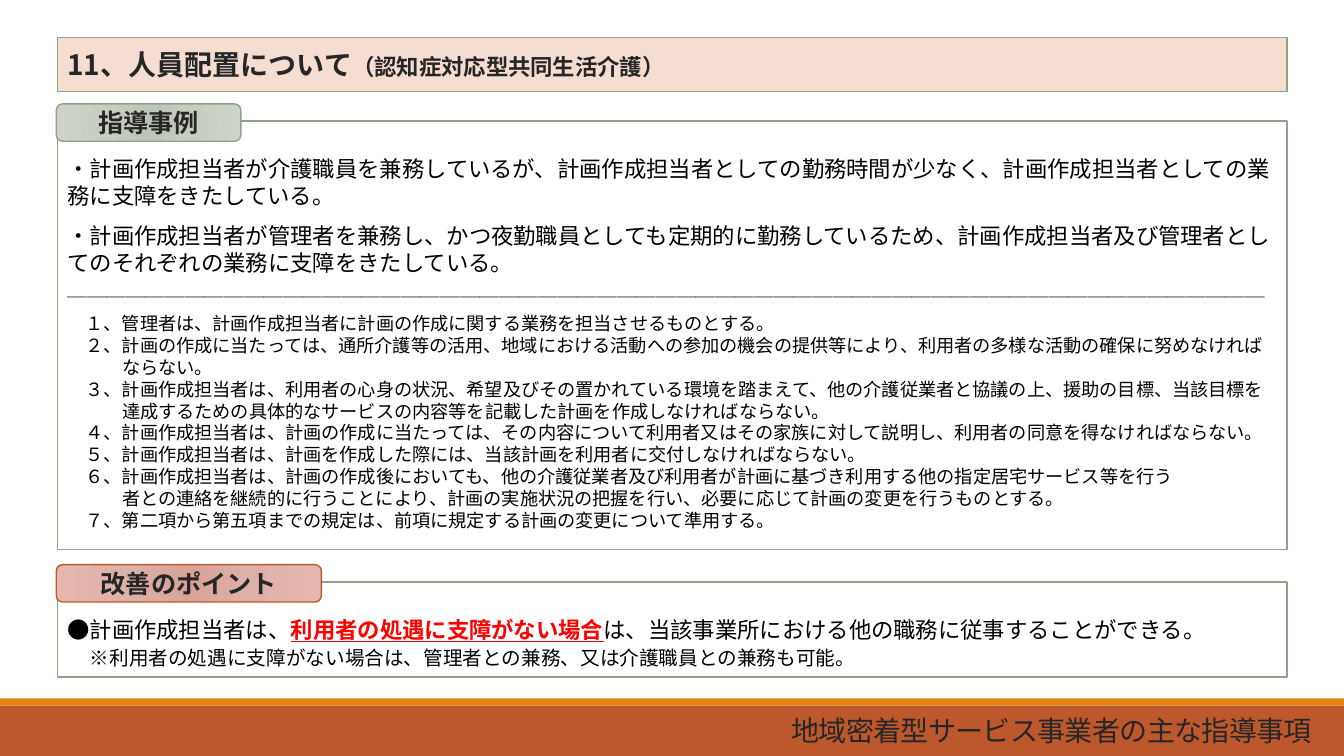
import pptx
import pptx.dml.color
import pptx.enum.shapes
import pptx.enum.text
import pptx.oxml
import pptx.oxml.ns
import pptx.util
from dataclasses import dataclass
from lxml import etree

Cm = pptx.util.Cm
Pt = pptx.util.Pt
Shape = pptx.enum.shapes.MSO_SHAPE
Align = pptx.enum.text.PP_ALIGN
Anchor = pptx.enum.text.MSO_ANCHOR


@dataclass(frozen=True)
class Theme:
    font: str = "Noto Sans CJK JP"
    white: str = "FFFFFF"
    black: str = "000000"
    dark: str = "262626"
    red: str = "FF0000"
    sage: str = "94A088"
    rust: str = "BD582C"
    orange: str = "E48312"
    peach: str = "F5DDD2"
    sage_gradient: tuple = ("BBC3B5", "C7CDC1", "CDD4C7")
    rust_gradient: tuple = ("D7A197", "DEB1A8", "E6B7AE")
    title: float = 20
    badge: float = 18
    body: float = 16
    note: float = 14
    rule: float = 13
    leading: float = 1.205


THEME = Theme()
GRADIENT_STOPS = (0, 45000, 100000)
PANEL_TOP_INSET = Pt(24.3)

FINDINGS = (
    "・計画作成担当者が介護職員を兼務しているが、計画作成担当者としての勤務時間が少なく、計画作成担当者としての業務に支障をきたしている。",
    "・計画作成担当者が管理者を兼務し、かつ夜勤職員としても定期的に勤務しているため、計画作成担当者及び管理者としてのそれぞれの業務に支障をきたしている。",
)
RULES = (
    ("１、管理者は、計画作成担当者に計画の作成に関する業務を担当させるものとする。",),
    ("２、計画の作成に当たっては、通所介護等の活用、地域における活動への参加の機会の提供等により、利用者の多様な活動の確保に努めなければ",
     "ならない。"),
    ("３、計画作成担当者は、利用者の心身の状況、希望及びその置かれている環境を踏まえて、他の介護従業者と協議の上、援助の目標、当該目標を",
     "達成するための具体的なサービスの内容等を記載した計画を作成しなければならない。"),
    ("４、計画作成担当者は、計画の作成に当たっては、その内容について利用者又はその家族に対して説明し、利用者の同意を得なければならない。",),
    ("５、計画作成担当者は、計画を作成した際には、当該計画を利用者に交付しなければならない。",),
    ("６、計画作成担当者は、計画の作成後においても、他の介護従業者及び利用者が計画に基づき利用する他の指定居宅サービス等を行う",
     "者との連絡を継続的に行うことにより、計画の実施状況の把握を行い、必要に応じて計画の変更を行うものとする。"),
    ("７、第二項から第五項までの規定は、前項に規定する計画の変更について準用する。",),
)


def rgb(value):
    return pptx.dml.color.RGBColor.from_string(value)


def apply(target, formats):
    for name, value in formats.items():
        setattr(target, name, value)


def add_run(paragraph, text, size, color=THEME.dark, **formats):
    run = paragraph.add_run()
    run.text = text
    apply(run.font, {"name": THEME.font, "size": Pt(size), **formats})
    run.font.color.rgb = rgb(color)
    east_asian = etree.SubElement(run._r.get_or_add_rPr(), pptx.oxml.ns.qn("a:ea"))
    east_asian.set("typeface", THEME.font)
    return run


def add_paragraph(frame, **formats):
    first = frame.paragraphs[0]
    paragraph = frame.add_paragraph() if first.runs else first
    apply(paragraph, {"alignment": Align.LEFT, **formats})
    return paragraph


def indent(paragraph, left, first_line=0):
    properties = paragraph._p.get_or_add_pPr()
    properties.set("marL", str(Pt(left)))
    properties.set("indent", str(Pt(first_line)))


def add_block(slide, kind, box, fill, line=None, width=1):
    shape = slide.shapes.add_shape(kind, *map(Cm, box))
    shape.shadow.inherit = False
    shape.fill.solid()
    shape.fill.fore_color.rgb = rgb(fill)
    if line:
        shape.line.color.rgb = rgb(line)
        shape.line.width = Pt(width)
    else:
        shape.line.fill.background()
    apply(shape.text_frame, {"word_wrap": True, "vertical_anchor": Anchor.MIDDLE})
    return shape


def add_radial_fill(shape, colors):
    stops = "".join(
        f'<a:gs pos="{position}"><a:srgbClr val="{color}"/></a:gs>'
        for position, color in zip(GRADIENT_STOPS, colors)
    )
    gradient = pptx.oxml.parse_xml(
        f'<a:gradFill {pptx.oxml.ns.nsdecls("a")} rotWithShape="1"><a:gsLst>{stops}</a:gsLst>'
        '<a:path path="circle"><a:fillToRect l="100000" t="100000" r="100000" b="100000"/>'
        "</a:path></a:gradFill>"
    )
    properties = shape._element.spPr
    properties.replace(properties.find(pptx.oxml.ns.qn("a:solidFill")), gradient)


def add_title(slide, box):
    shape = add_block(slide, Shape.RECTANGLE, box, THEME.peach, THEME.sage)
    paragraph = add_paragraph(shape.text_frame)
    add_run(paragraph, "11、人員配置について", THEME.title, bold=True)
    add_run(paragraph, "（認知症対応型共同生活介護）", THEME.body, bold=True)


def add_panel(slide, box, label, badge_width, colors, badge_line):
    left, top, _, _ = box
    panel = add_block(slide, Shape.RECTANGLE, box, THEME.white, THEME.sage, 1.25)
    apply(panel.text_frame, {"vertical_anchor": Anchor.TOP, "margin_top": PANEL_TOP_INSET})
    badge_box = (left - 0.03, top - 0.43, badge_width, 0.94)
    badge = add_block(slide, Shape.ROUNDED_RECTANGLE, badge_box, colors[0], badge_line)
    add_radial_fill(badge, colors)
    paragraph = add_paragraph(badge.text_frame, alignment=Align.CENTER)
    add_run(paragraph, label, THEME.badge, bold=True)
    return panel.text_frame


def add_findings(slide, box):
    frame = add_panel(slide, box, "指導事例", 4.65, THEME.sage_gradient, THEME.sage)
    for index, finding in enumerate(FINDINGS):
        paragraph = add_paragraph(frame, line_spacing=Pt(THEME.body * THEME.leading),
                                  space_before=Pt(9.3 if index else 0))
        add_run(paragraph, finding, THEME.body, THEME.black)
    divider = add_paragraph(frame, line_spacing=Pt(THEME.note * THEME.leading))
    add_run(divider, "＿" * 61, THEME.note)
    for index, lines in enumerate(RULES):
        paragraph = add_paragraph(frame, line_spacing=Pt(THEME.rule * THEME.leading),
                                  space_before=Pt(0 if index else 9))
        indent(paragraph, 3 * THEME.rule, -2 * THEME.rule)
        for number, line in enumerate(lines):
            if number:
                paragraph.add_line_break()
            add_run(paragraph, line, THEME.rule, THEME.black)


def add_improvement(slide, box):
    frame = add_panel(slide, box, "改善のポイント", 6.68, THEME.rust_gradient, THEME.rust)
    spacing = Pt(THEME.body * THEME.leading)
    point = add_paragraph(frame, line_spacing=spacing)
    add_run(point, "●計画作成担当者は、", THEME.body, THEME.black)
    add_run(point, "利用者の処遇に支障がない場合", THEME.body, THEME.red, bold=True, underline=True)
    add_run(point, "は、当該事業所における他の職務に従事することができる。", THEME.body, THEME.black)
    note = add_paragraph(frame, line_spacing=spacing)
    indent(note, THEME.body)
    add_run(note, "※利用者の処遇に支障がない場合は、管理者との兼務、又は介護職員との兼務も可能。",
            THEME.note, THEME.black)


def add_footer(slide, box):
    left, top, width, height = box
    add_block(slide, Shape.RECTANGLE, box, THEME.rust)
    add_block(slide, Shape.RECTANGLE, (left, top - 0.18, width, 0.18), THEME.orange)
    caption = slide.shapes.add_textbox(*map(Cm, (left + 1.45, top + 0.1, 31.85, height - 0.1)))
    apply(caption.text_frame, {"word_wrap": True, "vertical_anchor": Anchor.MIDDLE})
    paragraph = add_paragraph(caption.text_frame, alignment=Align.RIGHT, line_spacing=0.85)
    run = add_run(paragraph, "地域密着型サービス事業者の主な指導事項", THEME.title)
    run._r.get_or_add_rPr().set("spc", "-50")


def main():
    presentation = pptx.Presentation()
    apply(presentation, {"slide_width": Cm(33.87), "slide_height": Cm(19.05)})
    slide = presentation.slides.add_slide(presentation.slide_layouts[6])
    add_footer(slide, (0, 17.78, 33.87, 1.27))
    add_title(slide, (1.45, 0.94, 30.99, 1.37))
    add_findings(slide, (1.45, 3.05, 30.99, 10.8))
    add_improvement(slide, (1.45, 14.66, 30.99, 2.41))
    presentation.save("out.pptx")


if __name__ == "__main__":
    main()
